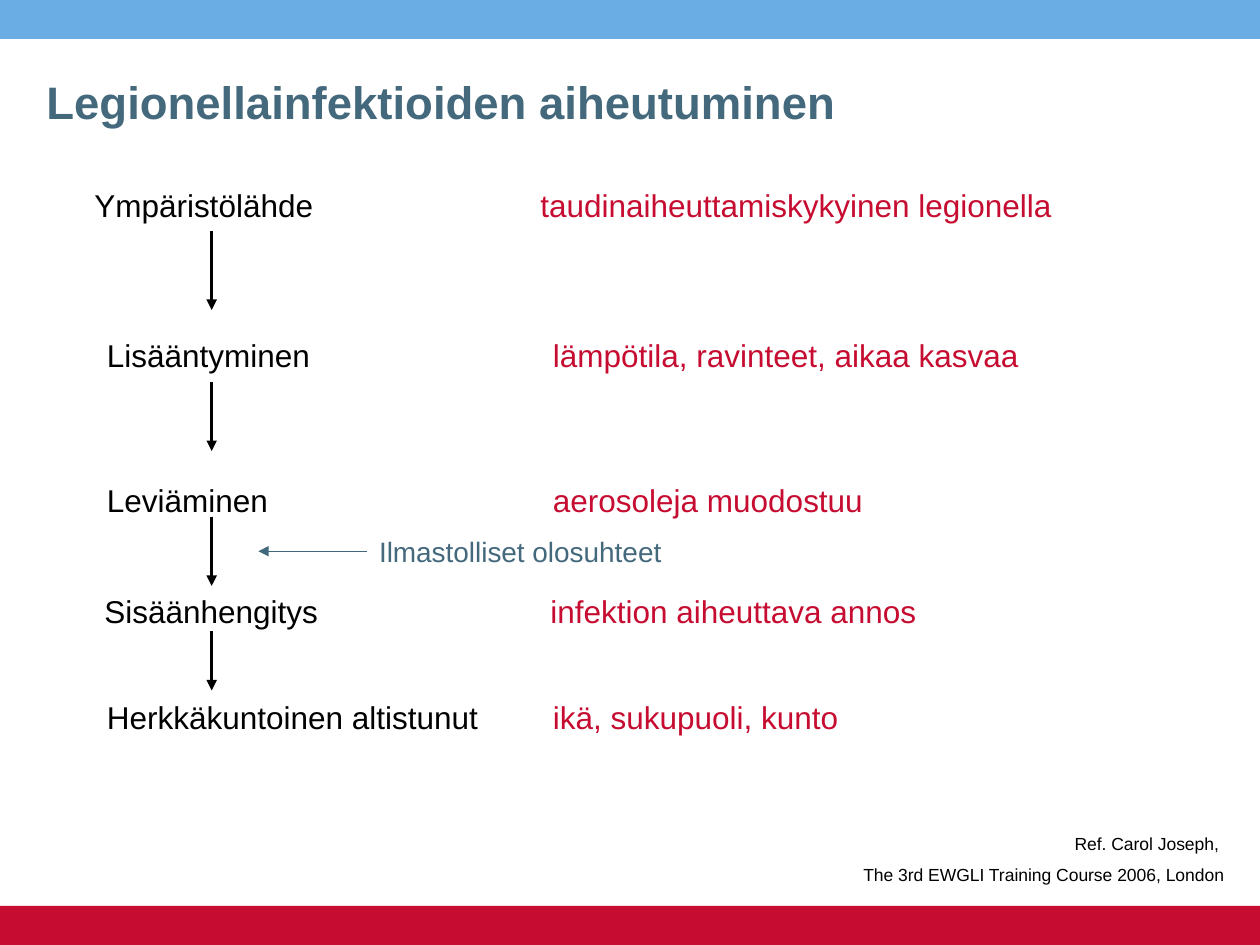
import pptx
import pptx.dml.color
import pptx.enum.shapes
import pptx.enum.text
import pptx.oxml.ns
import pptx.util
from lxml import etree

Inches = pptx.util.Inches
Pt = pptx.util.Pt
RGBColor = pptx.dml.color.RGBColor
PP_ALIGN = pptx.enum.text.PP_ALIGN
MSO_ANCHOR = pptx.enum.text.MSO_ANCHOR
qn = pptx.oxml.ns.qn

SKY = RGBColor(0x6A, 0xAD, 0xE4)
RED = RGBColor(0xC6, 0x0C, 0x30)
SLATE = RGBColor(0x44, 0x69, 0x7D)
ARROW_SLATE = RGBColor(0x41, 0x67, 0x7C)
BLACK = RGBColor(0, 0, 0)

FACTOR_TAB = 3.54
ARROW_X = 1.68

# stage, factor, left, top, width
STAGES = [
    ("Ympäristölähde", "taudinaiheuttamiskykyinen legionella", 0.65, 1.43, 8.78),
    ("Lisääntyminen", "lämpötila, ravinteet, aikaa kasvaa", 0.75, 2.62, 8.35),
    ("Leviäminen", "aerosoleja muodostuu", 0.75, 3.77, 7.88),
    ("Sisäänhengitys", "infektion aiheuttava annos", 0.73, 4.65, 7.88),
    ("Herkkäkuntoinen altistunut", "ikä, sukupuoli, kunto", 0.75, 5.49, 7.88),
]
# top and bottom of the arrow between each two stages
STAGE_ARROWS = [(1.83, 2.46), (3.03, 3.58), (4.1, 4.65), (5.01, 5.48)]


def add_text(s, box, paragraphs, size=18, bold=False, align=PP_ALIGN.LEFT,
             anchor=MSO_ANCHOR.TOP, line_spacing=None, gap=0, tab=None):
    """Each paragraph is a list of (text, colour) runs."""
    sp = s.shapes.add_textbox(*map(Inches, box))
    tf = sp.text_frame
    tf.word_wrap = True
    tf.vertical_anchor = anchor
    for i, runs in enumerate(paragraphs):
        p = tf.paragraphs[0] if i == 0 else tf.add_paragraph()
        p.alignment = align
        if line_spacing:
            p.line_spacing = line_spacing
        if i and gap:
            p.space_before = Pt(gap)
        if tab:
            tabs = etree.SubElement(p._p.get_or_add_pPr(), qn("a:tabLst"))
            etree.SubElement(tabs, qn("a:tab"), pos=str(Inches(tab)), algn="l")
        for text, color in runs:
            r = p.add_run()
            r.text = text
            r.font.name = "Arial"
            r.font.size = Pt(size)
            r.font.bold = bold
            r.font.color.rgb = color
    return sp


def add_band(s, box, color):
    sp = s.shapes.add_shape(pptx.enum.shapes.MSO_SHAPE.RECTANGLE, *map(Inches, box))
    sp.shadow.inherit = False
    sp.fill.solid()
    sp.fill.fore_color.rgb = color
    sp.line.fill.background()


def add_arrow(s, start, end, color, width):
    line = s.shapes.add_connector(pptx.enum.shapes.MSO_CONNECTOR.STRAIGHT,
                                  *map(Inches, start + end))
    line.line.color.rgb = color
    line.line.width = Pt(width)
    etree.SubElement(line.line._get_or_add_ln(), qn("a:tailEnd"), type="triangle")
    etree.SubElement(line._element.spPr, qn("a:effectLst"))


def add_title(s, box):
    add_text(s, box, [[("Legionellainfektioiden aiheutuminen", SLATE)]],
             size=26, bold=True, anchor=MSO_ANCHOR.MIDDLE, line_spacing=0.85)


def add_infection_chain(s):
    for stage, factor, left, top, width in STAGES:
        add_text(s, (left, top, width, 0.4),
                 [[(stage + "\t", BLACK), (factor, RED)]], tab=FACTOR_TAB)
    for top, bottom in STAGE_ARROWS:
        add_arrow(s, (ARROW_X, top), (ARROW_X, bottom), BLACK, 2)


def add_climate_note(s, box):
    left, top, _, height = box
    middle = top + height / 2
    add_text(s, box, [[("Ilmastolliset olosuhteet", SLATE)]], size=16)
    add_arrow(s, (left, middle), (left - 0.86, middle), ARROW_SLATE, 0.75)


def add_reference(s, box):
    lines = ["Ref. Carol Joseph, ", "The 3rd EWGLI Training Course 2006, London"]
    add_text(s, box, [[(text, BLACK)] for text in lines],
             size=10, align=PP_ALIGN.RIGHT, gap=5.7)


def main():
    prs = pptx.Presentation()
    prs.slide_width, prs.slide_height = Inches(10), Inches(7.5)
    s = prs.slides.add_slide(prs.slide_layouts[6])
    # Top and bottom bands
    add_band(s, (0, 0, 10, 0.31), SKY)
    add_band(s, (0, 7.19, 10, 0.31), RED)
    # Content
    add_title(s, (0.27, 0.52, 9.53, 0.63))
    add_infection_chain(s)
    add_climate_note(s, (2.91, 4.19, 2.68, 0.37))
    add_reference(s, (2.72, 6.56, 7.09, 0.52))
    prs.save("out.pptx")


if __name__ == "__main__":
    main()
